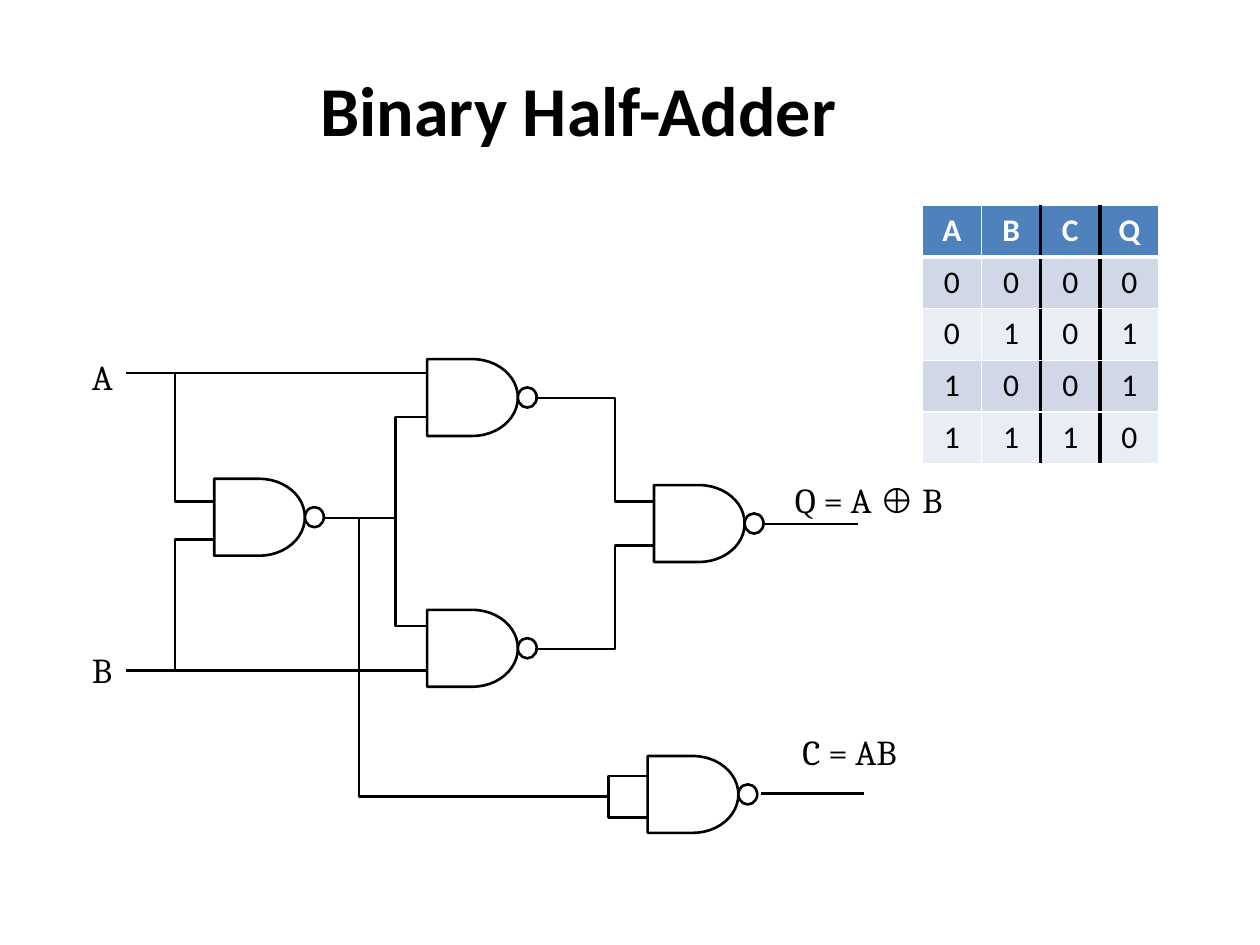
"""Build a slide with a NAND-gate half-adder circuit and its truth table."""
import lxml.etree
import pptx
import pptx.dml.color
import pptx.enum.shapes
import pptx.enum.text
import pptx.oxml.ns
import pptx.util

Inches = pptx.util.Inches
Pt = pptx.util.Pt
RGBColor = pptx.dml.color.RGBColor
MSO_SHAPE = pptx.enum.shapes.MSO_SHAPE
PP_ALIGN = pptx.enum.text.PP_ALIGN
qn = pptx.oxml.ns.qn

BLACK = RGBColor(0x00, 0x00, 0x00)
WHITE = RGBColor(0xFF, 0xFF, 0xFF)
HEADER_BLUE = RGBColor(0x4F, 0x81, 0xBD)
BANDS = (RGBColor(0xD0, 0xD8, 0xE8), RGBColor(0xE9, 0xED, 0xF4))

TITLE = "Binary Half-Adder"
TRUTH_TABLE = ("ABCQ", "0000", "0101", "1001", "1110")
OUTPUT_COLUMNS = (2, 3)
TABLE_LEFT, TABLE_TOP, COLUMN_WIDTH, ROW_HEIGHT = 7.32, 1.63, 0.47, 0.41

LABELS = [
    (0.63, 2.77, 0.55, 0.43, [("A", "Cambria")]),
    (0.63, 5.10, 0.55, 0.43, [("B", "Cambria")]),
    (6.21, 3.75, 1.71, 0.57,
     [("Q = A ", "Cambria"), ("⊕", "Times New Roman"), (" B", "Cambria")]),
    (6.27, 5.75, 1.33, 0.53, [("C = AB", "Cambria")]),
]

GATES = [(1.70, 3.80), (3.39, 2.85), (5.19, 3.85), (3.39, 4.84), (5.14, 6.00)]
GATE_WIDTH, GATE_HEIGHT = 0.72, 0.61
BUBBLE_WIDTH, BUBBLE_HEIGHT = 0.15, 0.16
TIED_INPUTS = (4.83, 6.16, 0.33, 0.33)

STRAIGHT_WIRES = [
    ((1.00, 2.96), (3.38, 2.96)),
    ((1.00, 5.32), (3.38, 5.32)),
    ((2.56, 4.11), (3.14, 4.11)),
    ((6.05, 4.16), (6.81, 4.16)),
    ((6.04, 6.30), (6.86, 6.30)),
]
BENT_WIRES = [
    [(1.69, 3.98), (1.39, 3.98), (1.39, 2.95)],
    [(1.69, 4.28), (1.39, 4.28), (1.39, 5.32)],
    [(3.38, 3.31), (3.14, 3.31), (3.14, 4.97), (3.38, 4.97)],
    [(5.18, 3.98), (4.88, 3.98), (4.88, 3.16), (4.25, 3.16)],
    [(5.18, 4.33), (4.88, 4.33), (4.88, 5.15), (4.25, 5.15)],
    [(2.85, 4.11), (2.85, 6.32), (4.83, 6.32)],
]


def add_run(paragraph, text, font_name, size, color=BLACK, bold=False):
    run = paragraph.add_run()
    run.text = text
    run.font.name = font_name
    run.font.size = Pt(size)
    run.font.bold = bold
    run.font.color.rgb = color


def add_text(slide, left, top, width, height, runs, size, bold=False, align=PP_ALIGN.LEFT):
    box = slide.shapes.add_textbox(*map(Inches, (left, top, width, height)))
    box.text_frame.word_wrap = True
    paragraph = box.text_frame.paragraphs[0]
    paragraph.alignment = align
    for text, font_name in runs:
        add_run(paragraph, text, font_name, size, bold=bold)


def outline(part):
    part.line.color.rgb = BLACK
    part.line.width = Pt(1.5)


def add_solid(slide, preset, left, top, width, height):
    solid = slide.shapes.add_shape(preset, *map(Inches, (left, top, width, height)))
    solid.shadow.inherit = False
    solid.fill.solid()
    solid.fill.fore_color.rgb = WHITE
    outline(solid)


def add_gate(slide, left, top):
    add_solid(slide, MSO_SHAPE.FLOWCHART_DELAY, left, top, GATE_WIDTH, GATE_HEIGHT)
    add_solid(slide, MSO_SHAPE.OVAL, left + GATE_WIDTH,
              top + (GATE_HEIGHT - BUBBLE_HEIGHT) / 2, BUBBLE_WIDTH, BUBBLE_HEIGHT)


def add_straight_wire(slide, start, end):
    wire = slide.shapes.add_connector(
        pptx.enum.shapes.MSO_CONNECTOR.STRAIGHT, *map(Inches, start + end))
    outline(wire)
    lxml.etree.SubElement(wire._element.spPr, qn("a:effectLst"))


def add_bent_wire(slide, points):
    start, *corners = [tuple(map(Inches, point)) for point in points]
    builder = slide.shapes.build_freeform(*start)
    builder.add_line_segments(corners, close=False)
    wire = builder.convert_to_shape()
    wire.shadow.inherit = False
    wire.fill.background()
    outline(wire)


def set_border(cell, side, color, width):
    border = lxml.etree.SubElement(
        cell._tc.get_or_add_tcPr(), qn(f"a:ln{side}"), w=str(Pt(width)))
    fill = lxml.etree.SubElement(border, qn("a:solidFill"))
    lxml.etree.SubElement(fill, qn("a:srgbClr"), val=str(color))


def add_truth_table(slide):
    rows, columns = len(TRUTH_TABLE), len(TRUTH_TABLE[0])
    table = slide.shapes.add_table(
        rows, columns, Inches(TABLE_LEFT), Inches(TABLE_TOP),
        Inches(COLUMN_WIDTH * columns), Inches(ROW_HEIGHT * rows)).table
    for column in table.columns:
        column.width = Inches(COLUMN_WIDTH)
    for r, values in enumerate(TRUTH_TABLE):
        table.rows[r].height = Inches(ROW_HEIGHT)
        header = r == 0
        for c, value in enumerate(values):
            cell = table.cell(r, c)
            for side, edge in (("L", c), ("R", c + 1)):
                divider = edge in OUTPUT_COLUMNS
                set_border(cell, side, BLACK if divider else WHITE, 2.25 if divider else 1)
            set_border(cell, "T", WHITE, 3 if r == 1 else 1)
            set_border(cell, "B", WHITE, 3 if header else 1)
            cell.fill.solid()
            cell.fill.fore_color.rgb = HEADER_BLUE if header else BANDS[(r - 1) % 2]
            paragraph = cell.text_frame.paragraphs[0]
            paragraph.alignment = PP_ALIGN.CENTER
            add_run(paragraph, value, "Calibri", 18, WHITE if header else BLACK, header)


def main():
    deck = pptx.Presentation()
    deck.slide_width, deck.slide_height = Inches(10), Inches(7.5)
    slide = deck.slides.add_slide(deck.slide_layouts[6])
    add_text(slide, 2.14, 0.48, 4.9, 0.77, [(TITLE, "Calibri")], 40, True, PP_ALIGN.CENTER)
    add_truth_table(slide)
    add_solid(slide, MSO_SHAPE.RECTANGLE, *TIED_INPUTS)
    for left, top in GATES:
        add_gate(slide, left, top)
    for start, end in STRAIGHT_WIRES:
        add_straight_wire(slide, start, end)
    for points in BENT_WIRES:
        add_bent_wire(slide, points)
    for left, top, width, height, runs in LABELS:
        add_text(slide, left, top, width, height, runs, 20)
    deck.save("out.pptx")


if __name__ == "__main__":
    main()
